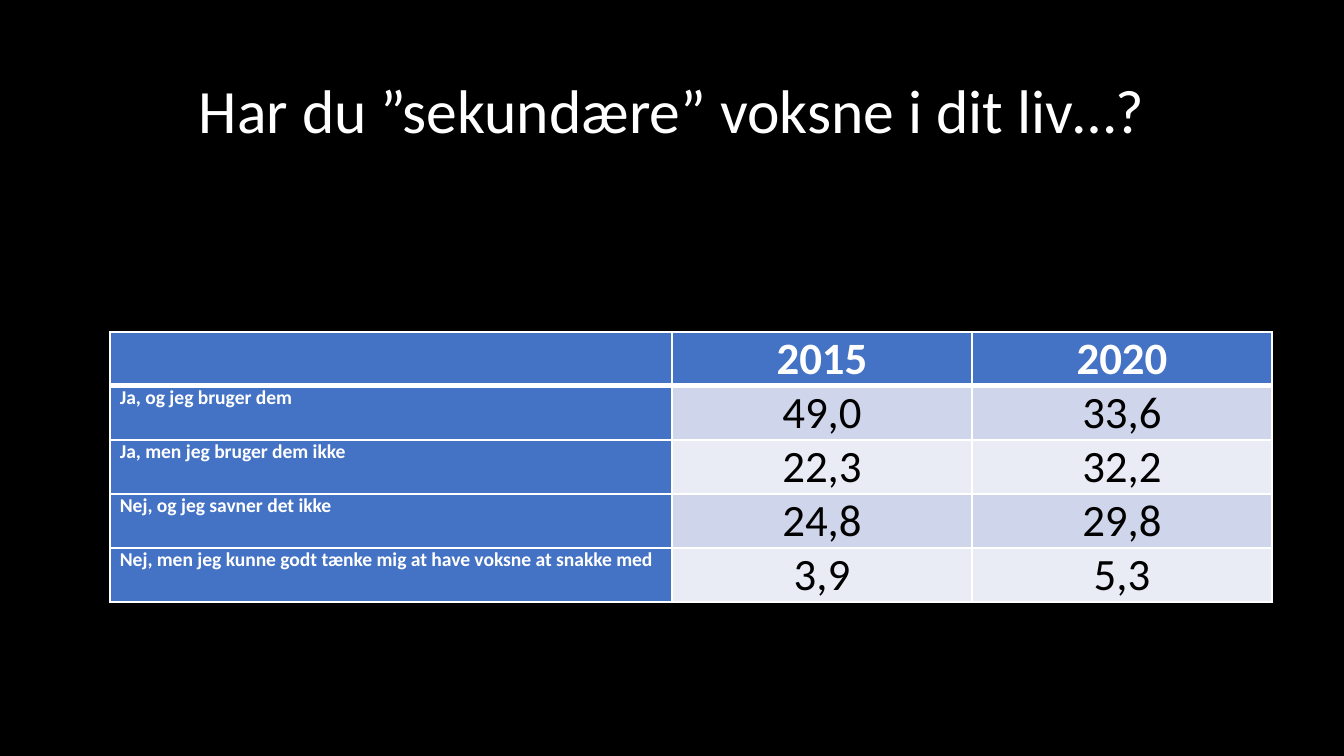
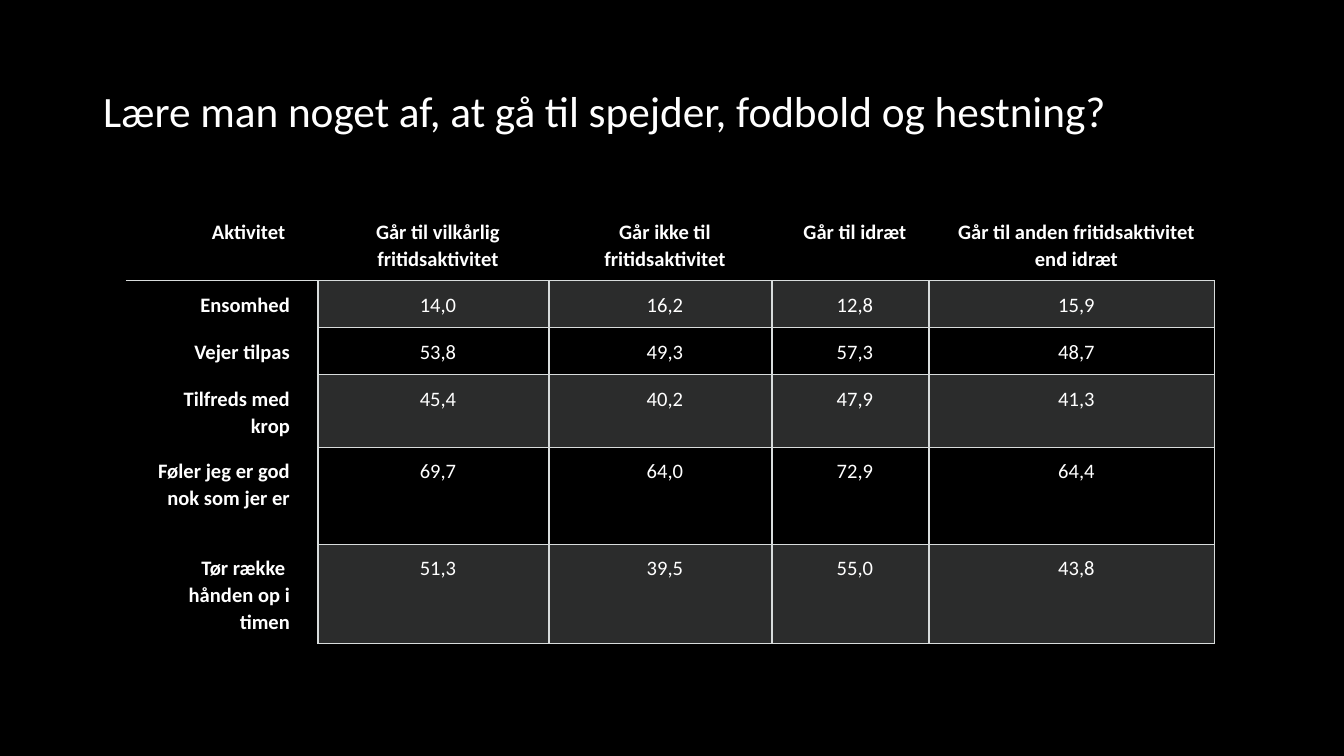
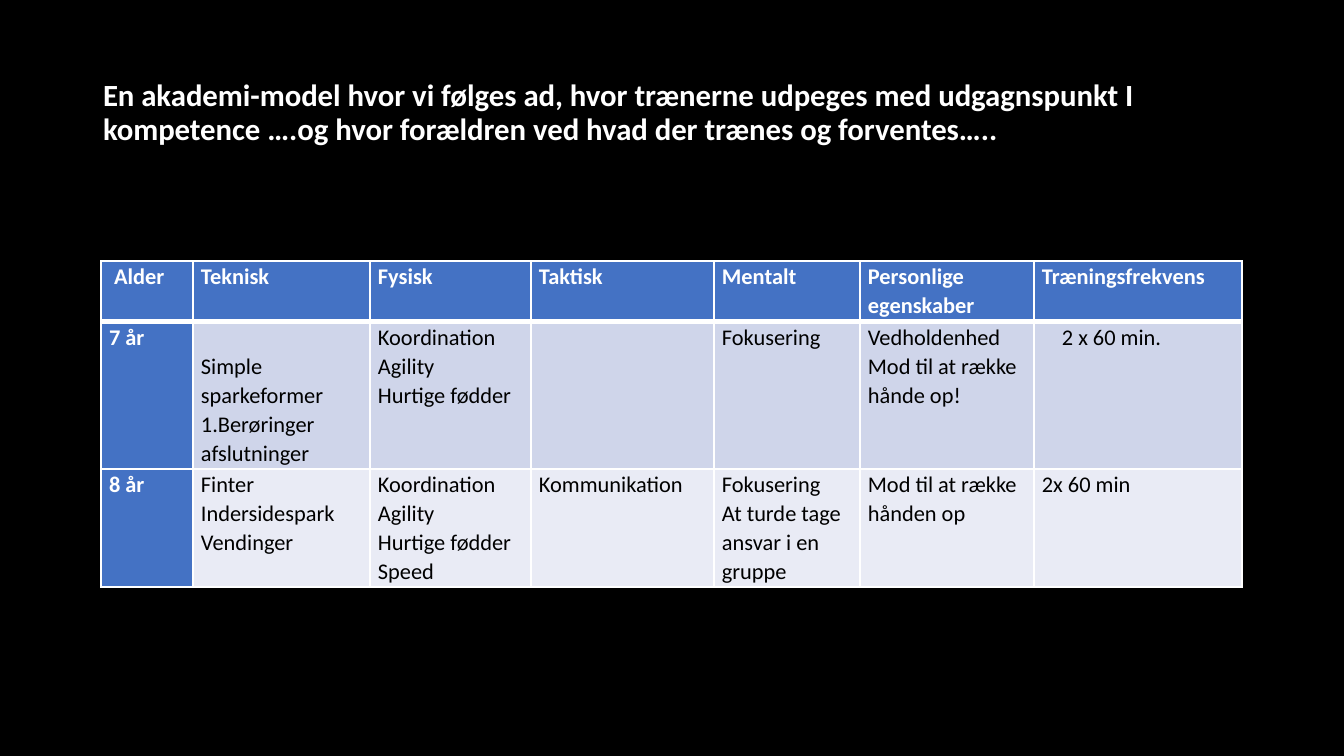
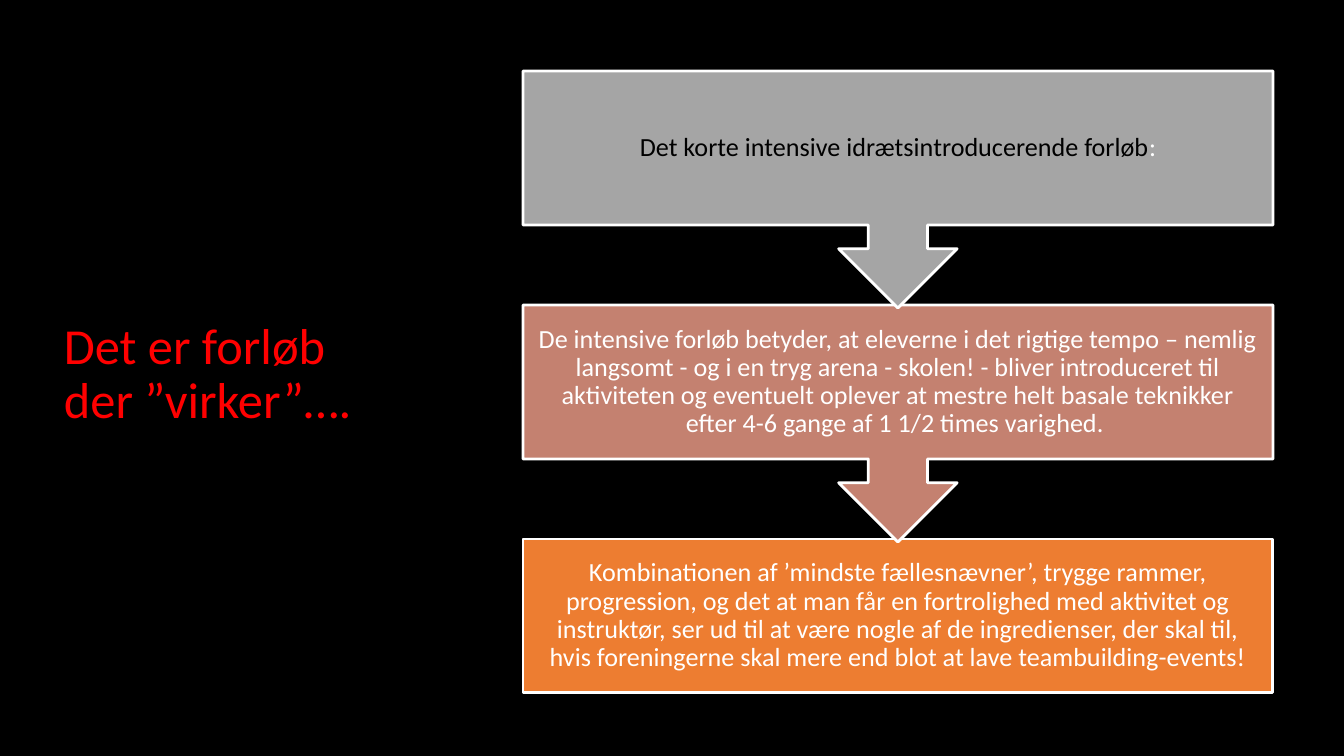
from lxml.etree import SubElement
from pptx import Presentation
from pptx.dml.color import RGBColor
from pptx.enum.shapes import MSO_SHAPE as Preset
from pptx.enum.text import MSO_ANCHOR as Anchor, PP_ALIGN as Align
from pptx.oxml.ns import qn
from pptx.util import Pt

SCALE = 914400 / 134.4
FONT = "Calibri"
COLORS = {
    "black": "000000",
    "white": "FFFFFF",
    "red": "FF0000",
    "blue": "4472C4",
    "band_dark": "CFD5EA",
    "band_light": "E9EBF5",
    "veil": "D8DEDC",
    "rule": "D8DCDC",
    "gray": "A5A5A5",
    "rose": "C48170",
    "orange": "ED7D31",
}
TITLE_BOX = (93, 40, 1158, 147)
SIDES = {"l": "a:lnL", "r": "a:lnR", "t": "a:lnT", "b": "a:lnB"}

SUPPORT_ROWS = [
    ("", "2015", "2020"),
    ("Ja, og jeg bruger dem", "49,0", "33,6"),
    ("Ja, men jeg bruger dem ikke", "22,3", "32,2"),
    ("Nej, og jeg savner det ikke", "24,8", "29,8"),
    ("Nej, men jeg kunne godt tænke mig at have voksne at snakke med", "3,9", "5,3"),
]
ACTIVITY_ROWS = [
    ("Aktivitet ", "Går til vilkårlig fritidsaktivitet", "Går ikke til fritidsaktivitet",
     "Går til idræt", "Går til anden fritidsaktivitet end idræt"),
    ("Ensomhed", "14,0", "16,2", "12,8", "15,9"),
    ("Vejer tilpas", "53,8", "49,3", "57,3", "48,7"),
    ("Tilfreds med krop", "45,4", "40,2", "47,9", "41,3"),
    ("Føler jeg er god nok som jer er", "69,7", "64,0", "72,9", "64,4"),
    ("Tør række  hånden op i timen", "51,3", "39,5", "55,0", "43,8"),
]
ACADEMY_ROWS = [
    (" Alder", "Teknisk", "Fysisk", "Taktisk", "Mentalt", "Personlige egenskaber",
     "Træningsfrekvens"),
    ("7 år", ("Simple sparkeformer", "1.Berøringer", "afslutninger"),
     ("Koordination", "Agility", "Hurtige fødder"), "", "Fokusering",
     ("Vedholdenhed", "Mod til at række hånde op!"), "2 x 60 min."),
    ("8 år", ("Finter", "Indersidespark", "Vendinger"),
     ("Koordination", "Agility", "Hurtige fødder", "Speed"), "Kommunikation",
     ("Fokusering", "At turde tage ansvar i en gruppe"), "Mod til at række hånden op",
     "2x 60 min"),
]
STEPS = [
    ("gray", Preset.DOWN_ARROW_CALLOUT,
     [("Det korte intensive idrætsintroducerende forløb", "black"), (":", "white")]),
    ("rose", Preset.DOWN_ARROW_CALLOUT,
     "De intensive forløb betyder, at eleverne i det rigtige tempo – nemlig langsomt - og i en "
     "tryg arena - skolen! - bliver introduceret til aktiviteten og eventuelt oplever at mestre "
     "helt basale teknikker efter 4-6 gange af 1 1/2 times varighed. "),
    ("orange", Preset.RECTANGLE,
     "Kombinationen af ’mindste fællesnævner’, trygge rammer, progression, og det at man får en "
     "fortrolighed med aktivitet og instruktør, ser ud til at være nogle af de ingredienser, der "
     "skal til, hvis foreningerne skal mere end blot at lave teambuilding-events!"),
]


def px(length):
    return round(length * SCALE)


def scaled(box):
    return [px(length) for length in box]


def rgb(name):
    return RGBColor.from_string(COLORS[name])


def write_text(frame, lines, size, color="white", bold=False, align=Align.LEFT, spacing=1.0):
    for index, line in enumerate(lines):
        para = frame.add_paragraph() if index else frame.paragraphs[0]
        para.alignment = align
        para.line_spacing = spacing
        for text, tone in [(line, color)] if isinstance(line, str) else line:
            span = para.add_run()
            span.text = text
            span.font.name = FONT
            span.font.size = Pt(size)
            span.font.bold = bold
            span.font.color.rgb = rgb(tone)


def set_insets(target, left, top, right, bottom):
    target.margin_left, target.margin_top = px(left), px(top)
    target.margin_right, target.margin_bottom = px(right), px(bottom)


def add_title(page, text, size, box=TITLE_BOX, **style):
    frame = page.shapes.add_textbox(*scaled(box)).text_frame
    frame.word_wrap = True
    frame.vertical_anchor = Anchor.MIDDLE
    set_insets(frame, 10, 5, 10, 5)
    write_text(frame, [text], size, spacing=0.9, **style)


def set_borders(cell, color, widths):
    properties = cell._tc.get_or_add_tcPr()
    for side, tag in SIDES.items():
        line = SubElement(properties, qn(tag))
        if side in widths:
            line.set("w", str(Pt(widths[side])))
            fill = SubElement(line, qn("a:solidFill"))
            SubElement(fill, qn("a:srgbClr"), val=COLORS[color])
        else:
            line.set("w", "0")
            SubElement(line, qn("a:noFill"))


def fill_cell(cell, color, opacity=100):
    if color is None:
        cell.fill.background()
        return
    cell.fill.solid()
    cell.fill.fore_color.rgb = rgb(color)
    if opacity < 100:
        tone = cell._tc.tcPr.find(qn("a:solidFill")).find(qn("a:srgbClr"))
        SubElement(tone, qn("a:alpha"), val=str(opacity * 1000))


def add_grid(page, corner, widths, heights, records, dress):
    box = (*corner, sum(widths), sum(heights))
    table = page.shapes.add_table(len(heights), len(widths), *scaled(box)).table
    table.first_row = table.horz_banding = False
    for column, width in zip(table.columns, widths):
        column.width = px(width)
    for row, height in zip(table.rows, heights):
        row.height = px(height)
    for row, record in enumerate(records):
        for column, content in enumerate(record):
            cell = table.cell(row, column)
            style = dress(cell, row, column)
            lines = (content,) if isinstance(content, str) else content
            if content:
                write_text(cell.text_frame, lines, **style)
    return table


def dress_banded(cell, row, column):
    header = row == 0
    heading = header or column == 0
    widths = {"l": 1, "r": 1, "t": 3 if row == 1 else 1, "b": 3 if header else 1}
    set_borders(cell, "white", widths)
    fill_cell(cell, "blue" if heading else "band_dark" if row % 2 else "band_light")
    return {"color": "white" if heading else "black", "bold": heading}


def dress_support(cell, row, column):
    set_insets(cell, 10, 0, 10, 0)
    label = column == 0
    return {**dress_banded(cell, row, column), "size": 10.5 if label else 24,
            "align": Align.LEFT if label else Align.CENTER}


def dress_academy(cell, row, column):
    set_insets(cell, 8, 0, 8, 0)
    return {**dress_banded(cell, row, column), "size": 12, "spacing": 1.07}


def dress_activity(cell, row, column):
    label, header = column == 0, row == 0
    set_insets(cell, 19, 10, 28 if label else 10, 10)
    sides = "b" if header else "tr" if label and row == 1 else "r" if label else "lrtb"
    set_borders(cell, "rule", dict.fromkeys(sides, 0.75))
    shaded = row % 2 and not label
    fill_cell(cell, "veil" if shaded else None, opacity=20)
    return {"size": 11, "bold": label or header, "spacing": 1.07,
            "align": Align.RIGHT if label else Align.CENTER}


def add_steps(page, box):
    left, top, width, height = box
    body = 154
    pitch = (height - body) // (len(STEPS) - 1)
    for index, (color, preset, text) in reversed(list(enumerate(STEPS))):
        extent = body if preset == Preset.RECTANGLE else pitch + 3
        shape = page.shapes.add_shape(
            preset, *scaled((left, top + index * pitch, width, extent)))
        shape.shadow.inherit = False
        shape.fill.solid()
        shape.fill.fore_color.rgb = rgb(color)
        shape.line.color.rgb = rgb("white")
        shape.line.width = Pt(1.5)
        frame = shape.text_frame
        frame.word_wrap = True
        frame.vertical_anchor = Anchor.MIDDLE
        set_insets(frame, 15, 15, 15, 15)
        write_text(frame, [text], 14, align=Align.CENTER, spacing=0.9)


def build_support(page):
    add_title(page, "Har du ”sekundære” voksne i dit liv…?", 33, align=Align.CENTER)
    add_grid(page, (110, 332), [562, 300, 300], [54] * 5, SUPPORT_ROWS, dress_support)


def build_activity(page):
    add_title(page, "Lære man noget af, at gå til spejder, fodbold og hestning?", 23.2)
    add_grid(page, (126, 208), [192, 231, 223, 157, 286], [71, 47, 47, 71, 97, 97],
             ACTIVITY_ROWS, dress_activity)


def build_academy(page):
    add_title(page, "En akademi-model hvor vi følges ad, hvor trænerne udpeges med udgagnspunkt I "
              "kompetence ….og hvor forældren ved hvad der trænes og forventes…..", 16.5, bold=True)
    table = add_grid(page, (101, 261), [92, 177, 161, 183, 146, 174, 208], [61, 147, 118],
                     ACADEMY_ROWS, dress_academy)
    table.cell(1, 1).margin_top = px(29)
    table.cell(1, 6).margin_left = px(28)


def build_courses(page):
    add_title(page, "Det er forløb der ”virker”….", 27, box=(54, 57, 340, 636), color="red")
    add_steps(page, (523, 71, 750, 622))


def main():
    deck = Presentation()
    deck.slide_width, deck.slide_height = px(1344), px(756)
    backdrop = deck.slide_master.background.fill
    backdrop.solid()
    backdrop.fore_color.rgb = rgb("black")
    for build in (build_support, build_activity, build_academy, build_courses):
        build(deck.slides.add_slide(deck.slide_layouts[6]))
    deck.save("out.pptx")


if __name__ == "__main__":
    main()
